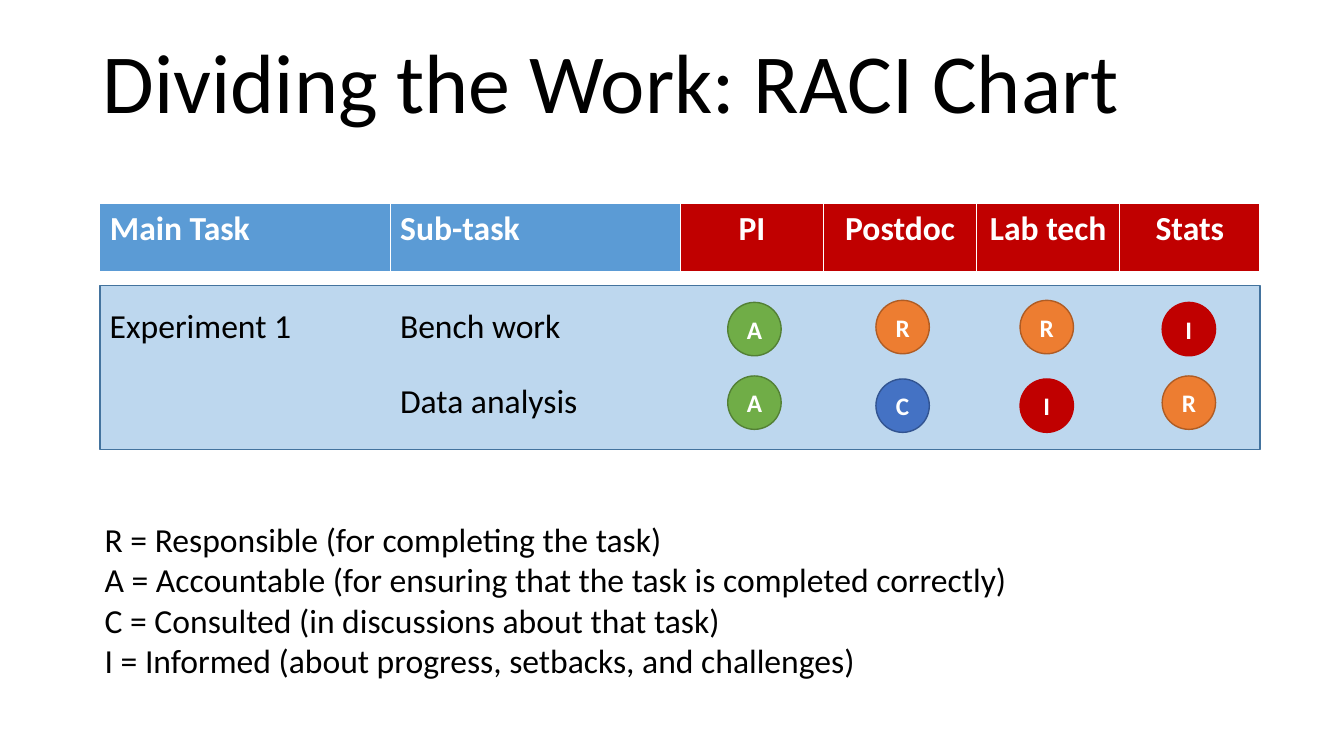
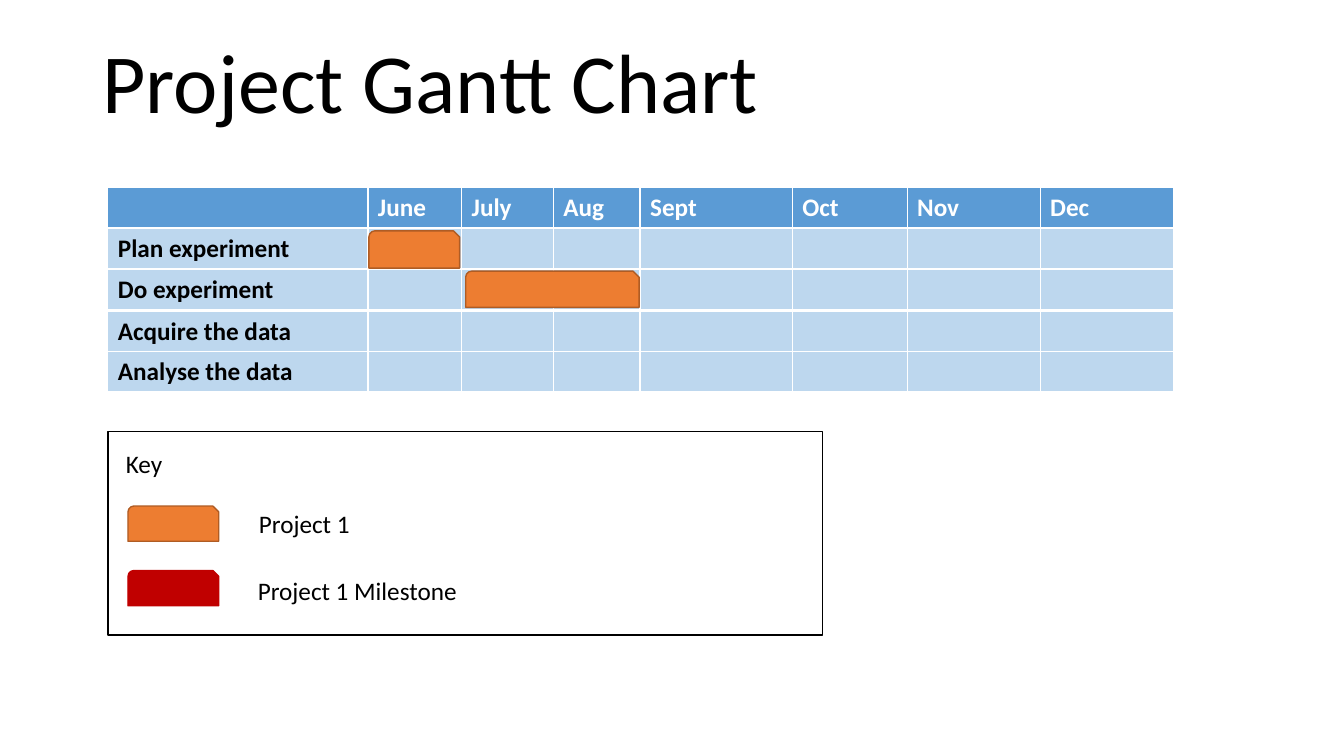
"""Build two project-planning slides: a RACI chart and a Gantt chart."""
from lxml import etree
from pptx import Presentation, util as u
from pptx.dml import color as c
from pptx.enum import shapes, text
from pptx.oxml import ns

PX = 9144
FONT = "Calibri"
COLORS = {
    "black": "000000", "white": "FFFFFF", "header": "5B9BD5", "pale": "BDD7EE",
    "pale edge": "43739E", "red": "C00000", "green": "70AD47", "green edge": "538035",
    "orange": "ED7D31", "orange edge": "AF5C24", "blue": "4472C4", "blue edge": "325491",
}
RGB = {name: c.RGBColor.from_string(value) for name, value in COLORS.items()}
LEFT, CENTER = text.PP_ALIGN.LEFT, text.PP_ALIGN.CENTER


def write(tf, lines, size, color="black", bold=False, align=LEFT):
    """Fill a text frame with one paragraph per line."""
    for i, line in enumerate(lines):
        p = tf.paragraphs[0] if i == 0 else tf.add_paragraph()
        p.text = line
        p.alignment = align
        p.font.name, p.font.size, p.font.bold = FONT, u.Pt(size), bold
        p.font.color.rgb = RGB[color]


def draw(s, kind, box, fill, edge):
    """Add a flat preset shape with a thin outline."""
    sp = s.shapes.add_shape(kind, *[v * PX for v in box])
    sp.shadow.inherit = False
    sp.fill.solid()
    sp.fill.fore_color.rgb = RGB[fill]
    sp.line.color.rgb = RGB[edge]
    sp.line.width = u.Pt(1)
    return sp


prs = Presentation()
prs.slide_height = 750 * PX
prs.slide_width = prs.slide_height * 16 // 9

for title in ("Dividing the Work: RACI Chart", "Project Gantt Chart"):
    s = prs.slides.add_slide(prs.slide_layouts[6])
    tf = s.shapes.add_textbox(92 * PX, -9 * PX, 1150 * PX, 145 * PX).text_frame
    tf.word_wrap = True
    tf.vertical_anchor = text.MSO_ANCHOR.BOTTOM
    write(tf, [title], 60)
    tf.paragraphs[0].line_spacing = 0.9
raci, gantt = prs.slides

raci_widths = [288, 288, 142, 152, 142, 139]
raci_labels = ["Main Task", "Sub-task", "PI", "Postdoc", "Lab tech", "Stats"]
gantt_widths = [258, 93, 91, 86, 151, 114, 132, 132]
months = ["June", "July", "Aug", "Sept", "Oct", "Nov", "Dec"]
tasks = {"Plan experiment": 227, "Do experiment": 267,
         "Acquire the data": 309, "Analyse the data": 349}
strips = [
    (raci, 99, 202, 69, 24, raci_widths, raci_labels, ["header"] * 2 + ["red"] * 4),
    (gantt, 107, 186, 41, 18, gantt_widths, [""] + months, ["header"] * 8),
]
for task, top in tasks.items():
    strips.append((gantt, 107, top, 41, 18, gantt_widths, [task] + [""] * 7, ["pale"] * 8))

for s, left, top, height, size, widths, labels, fills in strips:
    table = s.shapes.add_table(1, len(widths), left * PX, top * PX,
                               sum(widths) * PX, height * PX).table
    table.horz_banding = False
    for j, (width, label, fill) in enumerate(zip(widths, labels, fills)):
        table.columns[j].width = width * PX
        cell = table.cell(0, j)
        write(cell.text_frame, [label], size, "black" if fill == "pale" else "white", True,
              CENTER if fill == "red" else LEFT)
        tc_pr = cell._tc.get_or_add_tcPr()
        for side, points in (("L", 1), ("R", 1), ("T", 1), ("B", 3)):
            ln = etree.SubElement(tc_pr, ns.qn("a:ln" + side), w=str(u.Pt(points)))
            solid = etree.SubElement(ln, ns.qn("a:solidFill"))
            etree.SubElement(solid, ns.qn("a:srgbClr"), val=COLORS["white"])
        cell.fill.solid()
        cell.fill.fore_color.rgb = RGB[fill]

RECT, OVAL = shapes.MSO_SHAPE.RECTANGLE, shapes.MSO_SHAPE.OVAL
BAR = shapes.MSO_SHAPE.SNIP_ROUND_RECTANGLE

draw(raci, RECT, (99, 283, 1151, 163), "pale", "pale edge")
role_colors = {"R": ("orange", "orange edge"), "A": ("green", "green edge"),
               "C": ("blue", "blue edge"), "I": ("red", "red")}
role_lefts = (722, 869, 1012, 1153)
for roles, tops in (("ARRI", (300, 298, 298, 300)), ("ACIR", (373, 376, 376, 373))):
    for role, left, top in zip(roles, role_lefts, tops):
        sp = draw(raci, OVAL, (left, top, 53, 53), *role_colors[role])
        sp.text_frame.vertical_anchor = text.MSO_ANCHOR.MIDDLE
        write(sp.text_frame, [role], 18, "white", True, CENTER)

draw(gantt, RECT, (107, 428, 709, 202), "white", "black")
for box, fill, edge in (
    ((366, 229, 90, 37), "orange", "orange edge"),
    ((462, 269, 172, 36), "orange", "orange edge"),
    ((127, 502, 90, 35), "orange", "orange edge"),
    ((127, 566, 90, 35), "red", "red"),
):
    draw(gantt, BAR, box, fill, edge)

role_key = [
    "R = Responsible (for completing the task)",
    "A = Accountable (for ensuring that the task is completed correctly)",
    "C = Consulted (in discussions about that task)",
    "I = Informed (about progress, setbacks, and challenges)",
]
for s, box, lines, size in (
    (raci, (99, 298, 202, 50), ["Experiment 1"], 24),
    (raci, (387, 298, 181, 50), ["Bench work"], 24),
    (raci, (387, 372, 198, 50), ["Data analysis"], 24),
    (raci, (94, 510, 923, 172), role_key, 24),
    (gantt, (115, 440, 57, 40), ["Key"], 18),
    (gantt, (247, 499, 111, 40), ["Project 1"], 18),
    (gantt, (246, 566, 220, 40), ["Project 1 Milestone"], 18),
):
    tf = s.shapes.add_textbox(*[v * PX for v in box]).text_frame
    tf.word_wrap = False
    tf.auto_size = text.MSO_AUTO_SIZE.SHAPE_TO_FIT_TEXT
    write(tf, lines, size)

prs.save("out.pptx")
